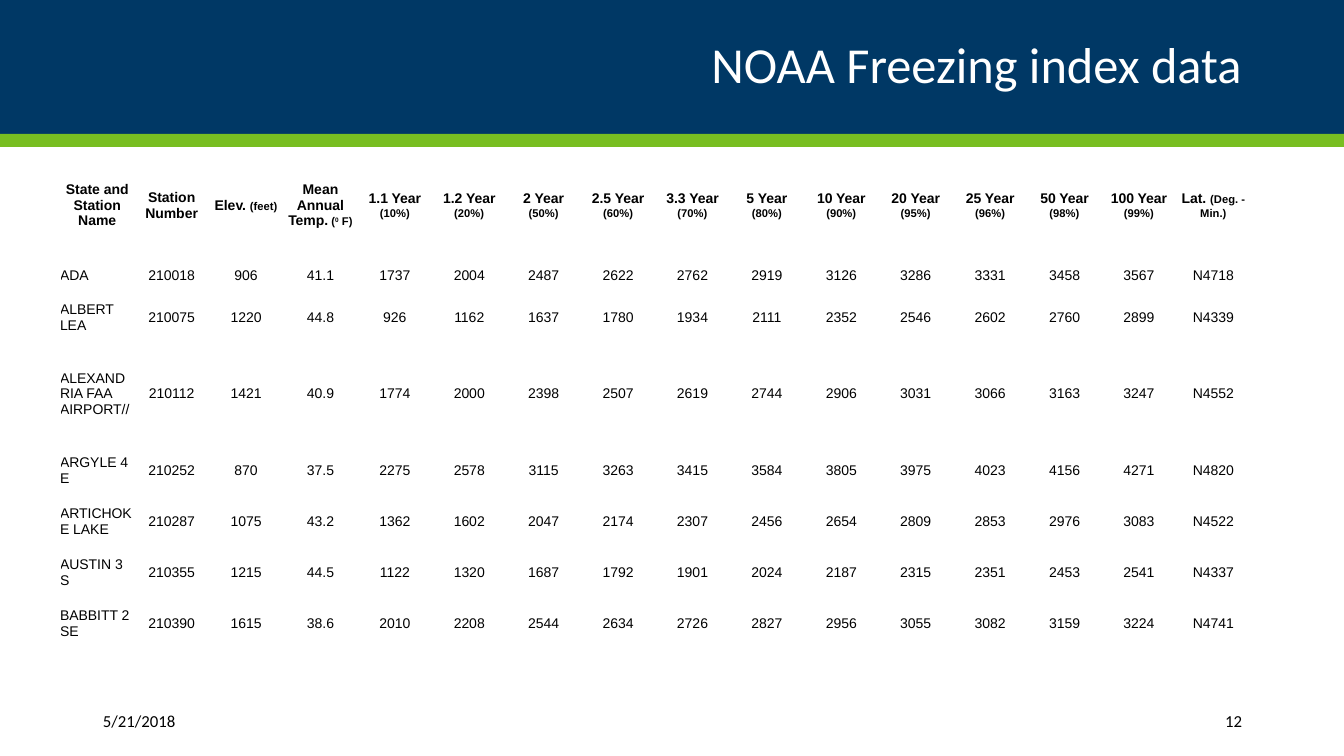
from pptx import Presentation
from pptx.dml.color import RGBColor
from pptx.enum.shapes import MSO_SHAPE as Shape
from pptx.enum.text import MSO_ANCHOR as Anchor, MSO_AUTO_SIZE as AutoSize, PP_ALIGN as Align
from pptx.util import Emu, Pt

EMU_PER_PX = 914400 / 100.8
SLIDE_WIDTH, SLIDE_HEIGHT = 1344, 756
NAVY, GREEN, WHITE, BLACK = "003865", "78BE21", "FFFFFF", "000000"
ROW_HEIGHTS = [109, 32, 51, 102, 51, 51, 51, 51]

HEADERS = [
    [("State and Station Name", {})],
    [("Station Number", {})],
    [("Elev. ", {}), ("(feet)", {"size": 8})],
    [("Mean Annual Temp.", {}), (" (", {"size": 8}),
     ("0", {"size": 8, "baseline": 30000}), (" F)", {"size": 8})],
] + [
    [(f"{years} Year ", {}), (f"({percent}%)", {"size": 8})]
    for years, percent in [
        ("1.1", 10), ("1.2", 20), ("2", 50), ("2.5", 60), ("3.3", 70), ("5", 80),
        ("10", 90), ("20", 95), ("25", 96), ("50", 98), ("100", 99),
    ]
] + [[("Lat. ", {}), ("(Deg. - Min.)", {"size": 8})]]

STATIONS = [
    ("ADA", "210018 906 41.1 1737 2004 2487 2622 2762 2919 3126 3286 3331 3458 3567 N4718"),
    ("ALBERT LEA", "210075 1220 44.8 926 1162 1637 1780 1934 2111 2352 2546 2602 2760 2899 N4339"),
    ("ALEXANDRIA FAA AIRPORT//", "210112 1421 40.9 1774 2000 2398 2507 2619 2744 2906 3031 3066 3163 3247 N4552"),
    ("ARGYLE 4 E", "210252 870 37.5 2275 2578 3115 3263 3415 3584 3805 3975 4023 4156 4271 N4820"),
    ("ARTICHOKE LAKE", "210287 1075 43.2 1362 1602 2047 2174 2307 2456 2654 2809 2853 2976 3083 N4522"),
    ("AUSTIN 3 S", "210355 1215 44.5 1122 1320 1687 1792 1901 2024 2187 2315 2351 2453 2541 N4337"),
    ("BABBITT 2 SE", "210390 1615 38.6 2010 2208 2544 2634 2726 2827 2956 3055 3082 3159 3224 N4741"),
]


def px(length):
    return Emu(round(length * EMU_PER_PX))


def color(hex_value):
    return RGBColor.from_string(hex_value)


def set_attributes(target, values):
    for name, value in values.items():
        setattr(target, name, value)


def add_run(paragraph, text, size, name, hex_value, bold=False, baseline=0):
    run = paragraph.add_run()
    run.text = text
    set_attributes(run.font, {"size": Pt(size), "name": name, "bold": bold})
    run.font.color.rgb = color(hex_value)
    if baseline:
        run._r.get_or_add_rPr().set("baseline", str(baseline))


def add_band(slide, left, top, width, height, fill):
    band = slide.shapes.add_shape(Shape.RECTANGLE, *map(px, (left, top, width, height)))
    band.shadow.inherit = False
    band.fill.solid()
    band.fill.fore_color.rgb = color(fill)
    band.line.fill.background()


def add_header(slide, left, top, width, height):
    band_height = round(height * 10 / 11)
    add_band(slide, left, top, width, band_height, NAVY)
    add_band(slide, left, top + band_height, width, height - band_height, GREEN)
    title = slide.shapes.title
    title.element.getparent().append(title.element)
    set_attributes(title, {"left": px(left + 93), "top": px(top + 17),
                           "width": px(width - 185), "height": px(101)})
    set_attributes(title.text_frame, {"vertical_anchor": Anchor.MIDDLE, "word_wrap": True,
                                      "auto_size": AutoSize.NONE})
    paragraph = title.text_frame.paragraphs[0]
    set_attributes(paragraph, {"alignment": Align.RIGHT, "line_spacing": 0.9})
    add_run(paragraph, "NOAA Freezing index data", 36, "Calibri", WHITE)


def fill_cell(cell, runs, alignment, bold):
    set_attributes(cell, {"margin_left": 0, "margin_right": 0, "margin_top": 0,
                          "margin_bottom": 0, "vertical_anchor": Anchor.MIDDLE})
    cell.fill.background()
    paragraph = cell.text_frame.paragraphs[0]
    paragraph.alignment = alignment
    for text, formats in runs:
        add_run(paragraph, text, **{"size": 10, "name": "Arial", "hex_value": BLACK,
                                    "bold": bold, **formats})


def add_station_table(slide, left, top, width):
    rows = [HEADERS] + [
        [[(text, {})] for text in [station, *values.split()]] for station, values in STATIONS
    ]
    table = slide.shapes.add_table(len(rows), len(HEADERS), px(left), px(top),
                                   px(width), px(sum(ROW_HEIGHTS))).table
    set_attributes(table, {"first_row": False, "horz_banding": False})
    for row_index, (row, height) in enumerate(zip(rows, ROW_HEIGHTS)):
        table.rows[row_index].height = px(height)
        for column_index, runs in enumerate(row):
            is_name = row_index > 0 and column_index == 0
            fill_cell(table.cell(row_index, column_index), runs,
                      Align.LEFT if is_name else Align.CENTER, row_index == 0)


def add_footer(slide, left, top, width, height):
    date_width, number_width = 150, 161
    for text, box_left, box_width, alignment in [
        ("5/21/2018", left, date_width, Align.LEFT),
        ("12", left + width - number_width, number_width, Align.RIGHT),
    ]:
        box = slide.shapes.add_textbox(px(box_left), px(top), px(box_width), px(height))
        set_attributes(box.text_frame, {"word_wrap": True, "vertical_anchor": Anchor.MIDDLE})
        paragraph = box.text_frame.paragraphs[0]
        paragraph.alignment = alignment
        add_run(paragraph, text, 12, "Calibri", BLACK)


def main():
    presentation = Presentation()
    set_attributes(presentation, {"slide_width": px(SLIDE_WIDTH), "slide_height": px(SLIDE_HEIGHT)})
    slide = presentation.slides.add_slide(presentation.slide_layouts[5])
    add_header(slide, 0, 0, SLIDE_WIDTH, 147)
    add_station_table(slide, 60, 151, 1191)
    add_footer(slide, 93, 701, 1159, 40)
    presentation.save("out.pptx")


if __name__ == "__main__":
    main()
